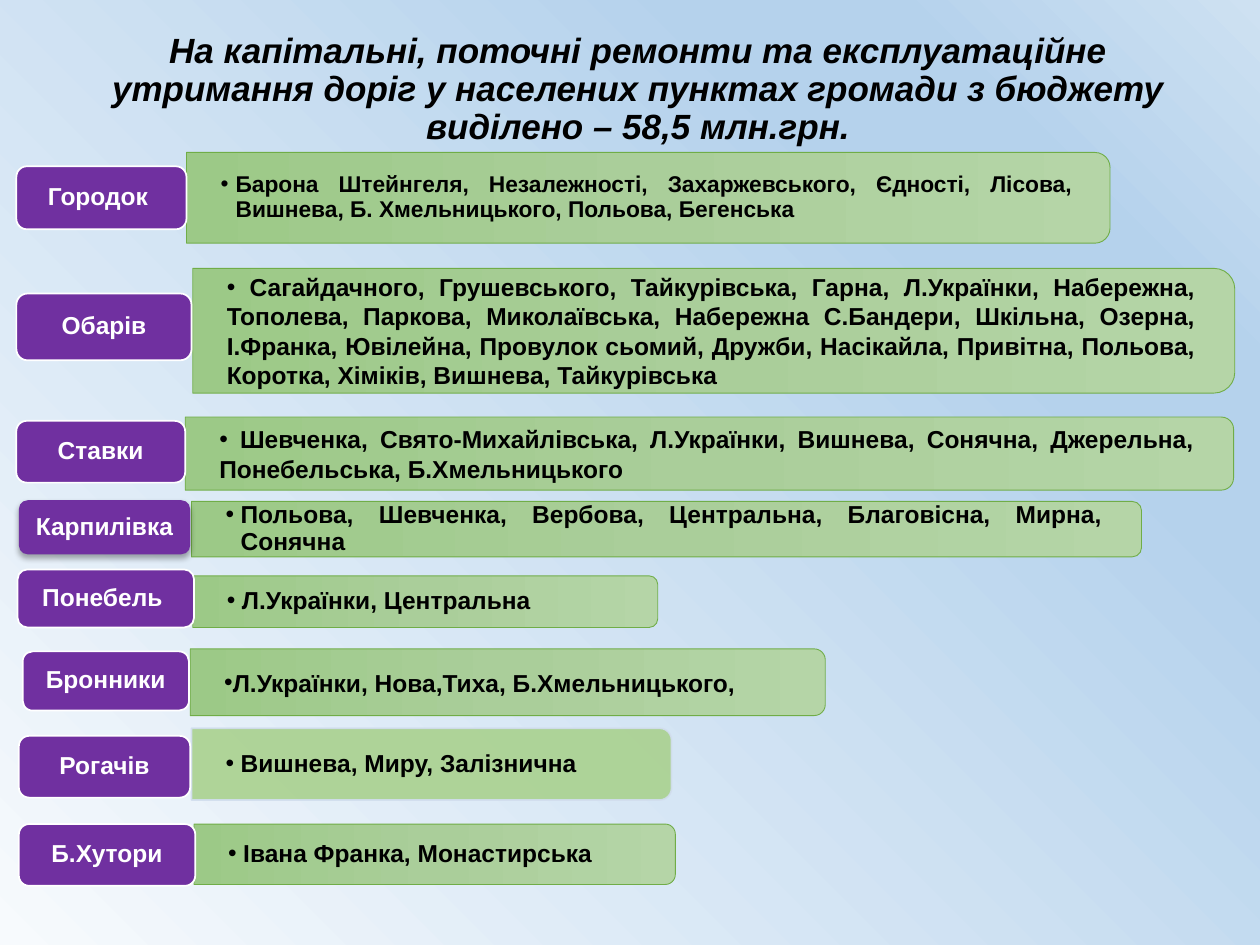
"""Build a slide listing the streets repaired in each settlement of the community."""
from lxml import etree
from pptx import Presentation
from pptx.dml.color import RGBColor
from pptx.enum.shapes import MSO_SHAPE
from pptx.enum.text import MSO_ANCHOR, PP_ALIGN
from pptx.oxml.ns import qn
from pptx.util import Inches, Pt

CENTER, JUSTIFY, LEFT = PP_ALIGN.CENTER, PP_ALIGN.JUSTIFY, PP_ALIGN.LEFT
MIDDLE = MSO_ANCHOR.MIDDLE
BAR, LABEL = MSO_SHAPE.ROUND_2_SAME_RECTANGLE, MSO_SHAPE.ROUNDED_RECTANGLE


def rgb(value):
    return RGBColor.from_string(value)


def set_gradient(fill, element, stops, angle):
    fill.gradient()
    fill.gradient_angle = angle
    gs_list = element.find(".//" + qn("a:gsLst"))
    for gs in list(gs_list):
        gs_list.remove(gs)
    for pos, color in stops:
        gs = etree.SubElement(gs_list, qn("a:gs"), pos=str(pos * 1000))
        etree.SubElement(gs, qn("a:srgbClr"), val=color)


prs = Presentation()
prs.slide_width, prs.slide_height = Inches(10), Inches(7.5)
s = prs.slides.add_slide(prs.slide_layouts[5])
set_gradient(s.background.fill, s.element,
             [(0, "F7FAFD"), (74, "B5D2EC"), (83, "B5D2EC"), (100, "CEE1F2")], 45)

title = s.shapes.title
title.left, title.top, title.width, title.height = map(Inches, (0.42, 0.28, 9.29, 0.87))
tf = title.text_frame
tf.text = ("На капітальні, поточні ремонти та експлуатаційне утримання доріг "
           "у населених пунктах громади з бюджету виділено – 58,5 млн.грн.")
tf.vertical_anchor = MIDDLE
p = tf.paragraphs[0]
p.alignment, p.line_spacing = CENTER, 0.9
font = p.runs[0].font
font.name, font.size, font.bold, font.italic = "Arial", Pt(20), True, True
font.color.rgb = rgb("000000")

# name, label box, bar box, streets, size, alignment, hanging indent
rows = [
    ("Городок ", (0.13, 1.32, 1.35, 0.5), (1.48, 1.21, 7.33, 0.72),
     "Барона Штейнгеля, Незалежності, Захаржевського, Єдності, Лісова, Вишнева, "
     "Б. Хмельницького, Польова, Бегенська", 13, JUSTIFY, 0.12),
    ("Обарів", (0.13, 2.33, 1.39, 0.53), (1.53, 2.13, 8.27, 0.99),
     " Сагайдачного, Грушевського, Тайкурівська, Гарна, Л.Українки, Набережна, "
     "Тополева, Паркова, Миколаївська, Набережна С.Бандери, Шкільна, Озерна, "
     "І.Франка, Ювілейна, Провулок сьомий, Дружби, Насікайла, Привітна, Польова, "
     "Коротка, Хіміків, Вишнева, Тайкурівська", 14, JUSTIFY, 0),
    ("Ставки", (0.13, 3.34, 1.34, 0.49), (1.47, 3.31, 8.32, 0.58),
     " Шевченка, Свято-Михайлівська, Л.Українки, Вишнева, Сонячна, Джерельна, "
     "Понебельська, Б.Хмельницького", 14, JUSTIFY, 0),
    ("Карпилівка", (0.15, 3.97, 1.36, 0.43), (1.52, 3.98, 7.54, 0.44),
     "Польова, Шевченка, Вербова, Центральна, Благовісна, Мирна, Сонячна",
     14, JUSTIFY, 0.12),
    ("Понебель ", (0.14, 4.52, 1.4, 0.46), (1.53, 4.57, 3.69, 0.41),
     "Л.Українки, Центральна", 14, JUSTIFY, 0.12),
    ("Бронники", (0.18, 5.17, 1.32, 0.47), (1.51, 5.15, 5.04, 0.53),
     "Л.Українки, Нова,Тиха, Б.Хмельницького,", 14, LEFT, 0),
    ("Рогачів", (0.15, 5.84, 1.36, 0.49), (1.52, 5.78, 3.81, 0.57),
     "Вишнева, Миру, Залізнична", 14, LEFT, 0.12),
    ("Б.Хутори", (0.15, 6.54, 1.4, 0.49), (1.54, 6.54, 3.82, 0.48),
     "Івана Франка, Монастирська", 14, LEFT, 0.12),
]

for name, label_box, (x, y, w, h), streets, size, align, indent in rows:
    bar = s.shapes.add_shape(BAR, Inches(x + (w - h) / 2), Inches(y + (h - w) / 2),
                             Inches(h), Inches(w))
    bar.rotation = 90
    bar.shadow.inherit = False
    if name == "Рогачів":
        bar.fill.solid()
        bar.fill.fore_color.rgb = rgb("A9D18E")
        bar.line.color.rgb, bar.line.width = rgb("D2DEEF"), Pt(1)
        for clr in bar.element.spPr.iter(qn("a:srgbClr")):
            etree.SubElement(clr, qn("a:alpha"), val="90000")
    else:
        set_gradient(bar.fill, bar.element,
                     [(0, "B5D5A7"), (50, "AACE9A"), (100, "9CC987")], 270)
        bar.line.color.rgb, bar.line.width = rgb("70AD47"), Pt(0.5)

    tb = s.shapes.add_textbox(Inches(x), Inches(y + 0.05 * h), Inches(w - 0.04), Inches(0.9 * h))
    tf = tb.text_frame
    tf.word_wrap, tf.vertical_anchor = True, MIDDLE
    tf.margin_left = tf.margin_right = Inches(0.27)
    tf.margin_top = tf.margin_bottom = Inches(0.14)
    tf.text = streets
    p = tf.paragraphs[0]
    p.alignment, p.line_spacing = align, 0.9 if indent else 1.0
    pPr = p._p.get_or_add_pPr()
    pPr.set("marL", str(Inches(indent)))
    pPr.set("indent", str(-Inches(indent)))
    etree.SubElement(pPr, qn("a:buFont"), typeface="Arial")
    etree.SubElement(pPr, qn("a:buChar"), char="•")
    font = p.runs[0].font
    font.name, font.size, font.bold = "Arial", Pt(size), True
    font.color.rgb = rgb("000000")

    label = s.shapes.add_shape(LABEL, *map(Inches, label_box))
    label.shadow.inherit = False
    label.fill.solid()
    label.fill.fore_color.rgb = rgb("7030A0")
    if name == "Карпилівка":
        label.line.fill.background()
        effects = label.element.spPr.find(qn("a:effectLst"))
        shadow = etree.SubElement(effects, qn("a:outerShdw"), blurRad=str(Pt(3.5)),
                                  dist=str(Pt(2.2)), dir="5400000", rotWithShape="0")
        clr = etree.SubElement(shadow, qn("a:srgbClr"), val="000000")
        etree.SubElement(clr, qn("a:alpha"), val="32000")
    else:
        label.line.color.rgb, label.line.width = rgb("FFFFFF"), Pt(1)
    tf = label.text_frame
    tf.word_wrap, tf.vertical_anchor = True, MIDDLE
    tf.margin_left = tf.margin_right = Inches(0.06)
    tf.margin_top = tf.margin_bottom = Inches(0.03)
    tf.text = name
    p = tf.paragraphs[0]
    p.alignment, p.line_spacing = CENTER, 0.9
    font = p.runs[0].font
    font.name, font.size, font.bold = "Arial", Pt(14), True
    font.color.rgb = rgb("FFFFFF")

prs.save("out.pptx")
